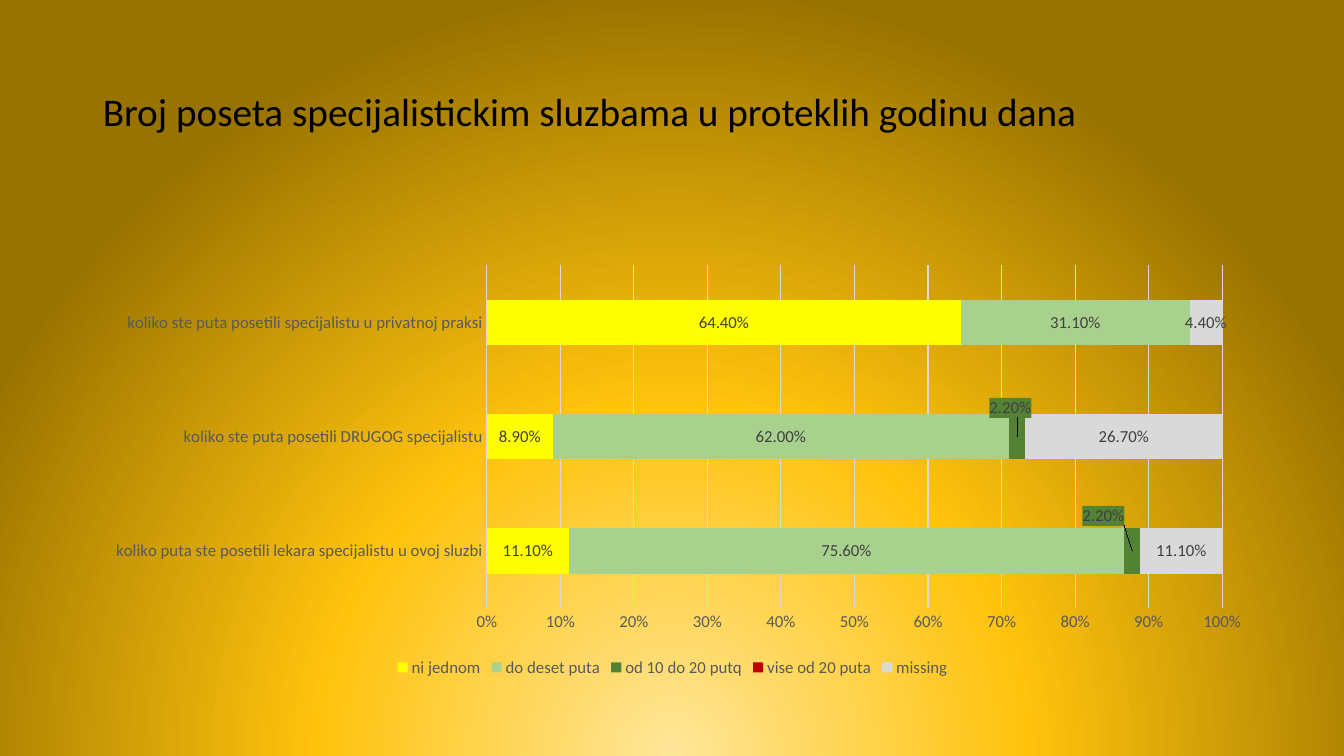
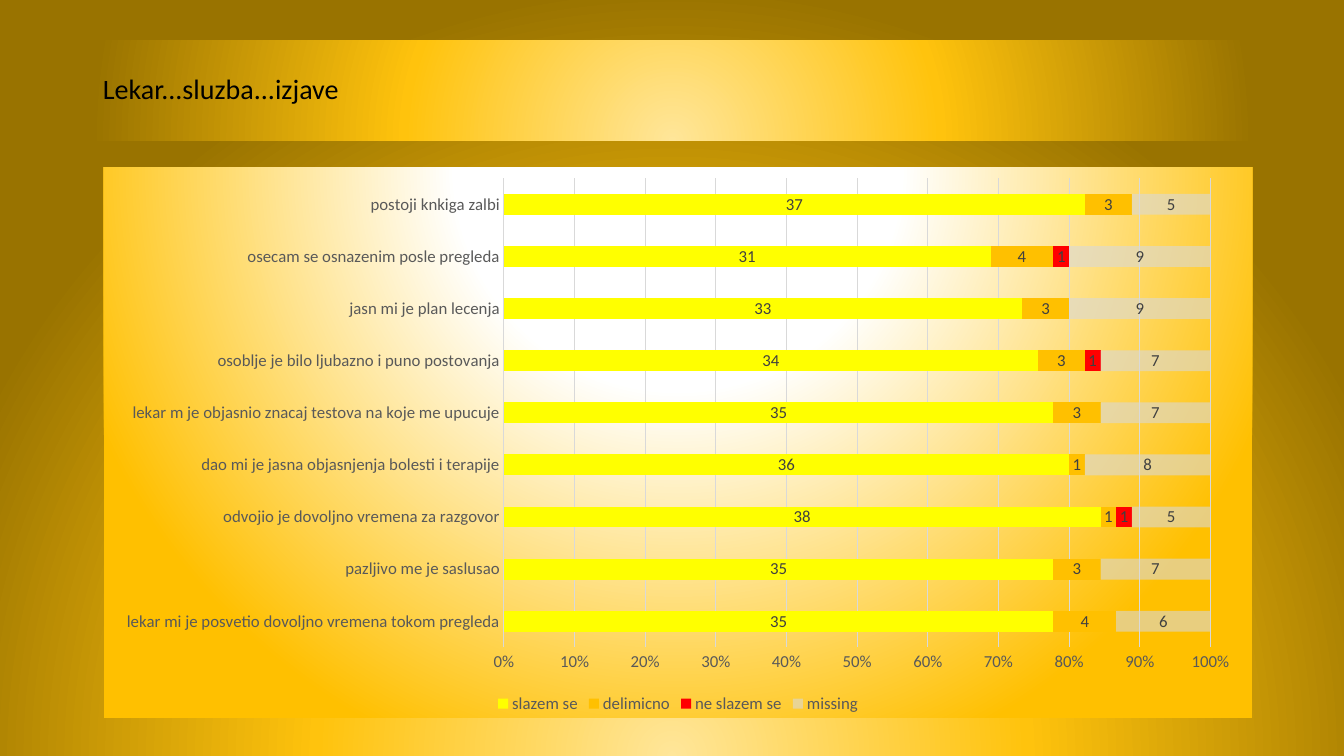
"""Build two survey slides with stacked percentage bar charts."""
from lxml import etree
from pptx import Presentation
from pptx.chart.data import CategoryChartData
from pptx.dml.color import RGBColor
from pptx.enum.chart import XL_CHART_TYPE, XL_LABEL_POSITION, XL_LEGEND_POSITION, XL_TICK_MARK
from pptx.enum.text import MSO_ANCHOR, MSO_AUTO_SIZE, PP_ALIGN
from pptx.oxml import parse_xml
from pptx.oxml.ns import nsdecls, qn
from pptx.util import Inches, Pt

STACKED = XL_CHART_TYPE.BAR_STACKED_100
CENTER = XL_LABEL_POSITION.CENTER
BOTTOM = XL_LEGEND_POSITION.BOTTOM
NO_TICK = XL_TICK_MARK.NONE
MIDDLE = MSO_ANCHOR.MIDDLE
NO_FIT = MSO_AUTO_SIZE.NONE
LEFT = PP_ALIGN.LEFT

FONT = "Calibri"
BLACK, AXIS_GRAY, LABEL_GRAY, LINE_GRAY = "000000", "595959", "404040", "D9D9D9"
YELLOW, AMBER, RED = "FFFF00", "FFC000", "FF0000"
LIGHT_GREEN, GREEN, DARK_RED = "A9D18E", "548235", "C00000"
GOLD = ([(0, "FFE699"), (46, "FFC30D"), (100, "997300")], (50, 130, 50, -30))
GLOW = ([(0, "FFFFFF"), (35, "FFFFFF"), (100, AMBER)], (50, -80, 50, 180))

SLIDES = [
    {
        "title": "Broj poseta specijalistickim sluzbama u proteklih godinu dana",
        "title_size": 28,
        "title_height": 1.45,
        "title_fill": None,
        "chart_at": (0.92, 2, 11.5, 4.76),
        "chart_fill": None,
        "plot_area": {"x": 0.34, "y": 0.133, "w": 0.634, "h": 0.714},
        "format": "0.00%",
        "categories": [
            "koliko ste puta posetili lekara specijalistu u ovoj sluzbi".replace("ste puta", "puta ste"),
            "koliko ste puta posetili DRUGOG specijalistu",
            "koliko ste puta posetili specijalistu u privatnoj praksi",
        ],
        "series": [
            ("ni jednom", YELLOW, 100, [0.111, 0.089, 0.644]),
            ("do deset puta", LIGHT_GREEN, 100, [0.756, 0.62, 0.311]),
            ("od 10 do 20 putq", GREEN, 100, [0.022, 0.022, None]),
            ("vise od 20 puta", DARK_RED, 100, [None, None, None]),
            ("missing", LINE_GRAY, 100, [0.111, 0.267, 0.044]),
        ],
        "moved_labels": [(2, 0, -0.025, -0.073), (2, 1, -0.006, -0.06)],
    },
    {
        "title": "Lekar...sluzba...izjave",
        "title_size": 20,
        "title_height": 0.99,
        "title_fill": GOLD,
        "chart_at": (1.03, 1.66, 11.39, 5.46),
        "chart_fill": GLOW,
        "plot_area": None,
        "format": "General",
        "categories": [
            "lekar mi je posvetio dovoljno vremena tokom pregleda",
            "pazljivo me je saslusao",
            "odvojio je dovoljno vremena za razgovor",
            "dao mi je jasna objasnjenja bolesti i terapije",
            "lekar m je objasnio znacaj testova na koje me upucuje",
            "osoblje je bilo ljubazno i puno postovanja",
            "jasn mi je plan lecenja",
            "osecam se osnazenim posle pregleda",
            "postoji knkiga zalbi",
        ],
        "series": [
            ("slazem se", YELLOW, 100, [35, 35, 38, 36, 35, 34, 33, 31, 37]),
            ("delimicno", AMBER, 100, [4, 3, 1, 1, 3, 3, 3, 4, 3]),
            ("ne slazem se", RED, 100, [None, None, 1, None, None, 1, None, 1, None]),
            ("missing", LINE_GRAY, 59, [6, 7, 5, 8, 7, 7, 9, 9, 5]),
        ],
        "moved_labels": [],
    },
]


def gradient(stops, focus):
    """Return a circular gradient fill element."""
    marks = "".join(
        f'<a:gs pos="{place * 1000}"><a:srgbClr val="{color}"/></a:gs>' for place, color in stops
    )
    sides = " ".join(f'{side}="{value * 1000}"' for side, value in zip("ltrb", focus))
    return parse_xml(
        f'<a:gradFill {nsdecls("a")} rotWithShape="1"><a:gsLst>{marks}</a:gsLst>'
        f'<a:path path="circle"><a:fillToRect {sides}/></a:path></a:gradFill>'
    )


def style_font(font, size, color):
    """Set the typeface, size and colour of a font."""
    font.name = FONT
    font.size = Pt(size)
    font.color.rgb = RGBColor.from_string(color)


deck = Presentation()
deck.slide_width, deck.slide_height = Inches(13.33), Inches(7.5)
master = deck.slide_master
master.background.fill.solid()
solid = next(master._element.iter(qn("p:bgPr"))).find(qn("a:solidFill"))
solid.getparent().replace(solid, gradient(*GOLD))

for content in SLIDES:
    page = deck.slides.add_slide(deck.slide_layouts[5])
    title = page.shapes.title
    title.left, title.top = Inches(0.92), Inches(0.4)
    title.width, title.height = Inches(11.5), Inches(content["title_height"])
    if content["title_fill"]:
        title.fill.solid()
        solid = title._element.spPr.find(qn("a:solidFill"))
        solid.getparent().replace(solid, gradient(*content["title_fill"]))
    title.text_frame.vertical_anchor = MIDDLE
    title.text_frame.auto_size = NO_FIT
    title.text_frame.word_wrap = True
    para = title.text_frame.paragraphs[0]
    para.alignment = LEFT
    para.line_spacing = 0.9
    span = para.add_run()
    span.text = content["title"]
    style_font(span.font, content["title_size"], BLACK)

    data = CategoryChartData(number_format=content["format"])
    data.categories = content["categories"]
    for name, color, opacity, values in content["series"]:
        data.add_series(name, values)
    box = [Inches(length) for length in content["chart_at"]]
    chart = page.shapes.add_chart(STACKED, *box, data).chart
    style_font(chart.font, 10, BLACK)
    chart.has_title = False
    chart.has_legend = True
    chart.legend.position = BOTTOM
    chart.legend.include_in_layout = False
    style_font(chart.legend.font, 12, AXIS_GRAY)

    for axis in (chart.category_axis, chart.value_axis):
        axis.major_tick_mark = axis.minor_tick_mark = NO_TICK
        style_font(axis.tick_labels.font, 12, AXIS_GRAY)
    chart.value_axis.tick_labels.number_format = "0%"
    chart.value_axis.tick_labels.number_format_is_linked = False
    chart.value_axis.format.line.fill.background()
    chart.value_axis.has_major_gridlines = True
    for line in (chart.category_axis.format.line, chart.value_axis.major_gridlines.format.line):
        line.color.rgb = RGBColor.from_string(LINE_GRAY)
        line.width = Pt(0.75)

    plot = chart.plots[0]
    plot.gap_width, plot.overlap = 150, 100
    plot.vary_by_categories = False
    for series, (name, color, opacity, values) in zip(plot.series, content["series"]):
        series.format.fill.solid()
        series.format.fill.fore_color.rgb = RGBColor.from_string(color)
        if opacity < 100:
            paint = next(series._element.iter(qn("a:srgbClr")))
            etree.SubElement(paint, qn("a:alpha"), val=str(opacity * 1000))
        labels = series.data_labels
        labels.show_value = True
        labels.position = CENTER
        labels.number_format = content["format"]
        labels.number_format_is_linked = False
        style_font(labels.font, 12, LABEL_GRAY)

    for series_index, point_index, shift_x, shift_y in content["moved_labels"]:
        series = plot.series[series_index]
        label = series.points[point_index].data_label
        style_font(label.font, 12, LABEL_GRAY)
        label.position = CENTER
        node = series._element.xpath(f"c:dLbls/c:dLbl[c:idx/@val='{point_index}']")[0]
        for old in node.findall(qn("c:spPr")):
            node.remove(old)
        parts = parse_xml(
            f'<c:dLbl {nsdecls("c", "a")}><c:layout><c:manualLayout>'
            f'<c:x val="{shift_x}"/><c:y val="{shift_y}"/></c:manualLayout></c:layout>'
            f'<c:numFmt formatCode="{content["format"]}" sourceLinked="0"/>'
            f'<c:spPr><a:solidFill><a:srgbClr val="{GREEN}"/></a:solidFill></c:spPr></c:dLbl>'
        )
        for place, part in enumerate(list(parts), 1):
            node.insert(place, part)

    space = chart._chartSpace
    if content["plot_area"]:
        area = next(space.iter(qn("c:plotArea")))
        for old in area.findall(qn("c:layout")):
            area.remove(old)
        sizes = "".join(f'<c:{key} val="{value}"/>' for key, value in content["plot_area"].items())
        area.insert(0, parse_xml(
            f'<c:layout {nsdecls("c")}><c:manualLayout><c:layoutTarget val="inner"/>'
            f'<c:xMode val="edge"/><c:yMode val="edge"/>{sizes}</c:manualLayout></c:layout>'
        ))
    if content["chart_fill"]:
        frame = parse_xml(f'<c:spPr {nsdecls("c", "a")}><a:ln><a:noFill/></a:ln></c:spPr>')
        frame.insert(0, gradient(*content["chart_fill"]))
        space.find(qn("c:chart")).addnext(frame)

deck.save("out.pptx")
